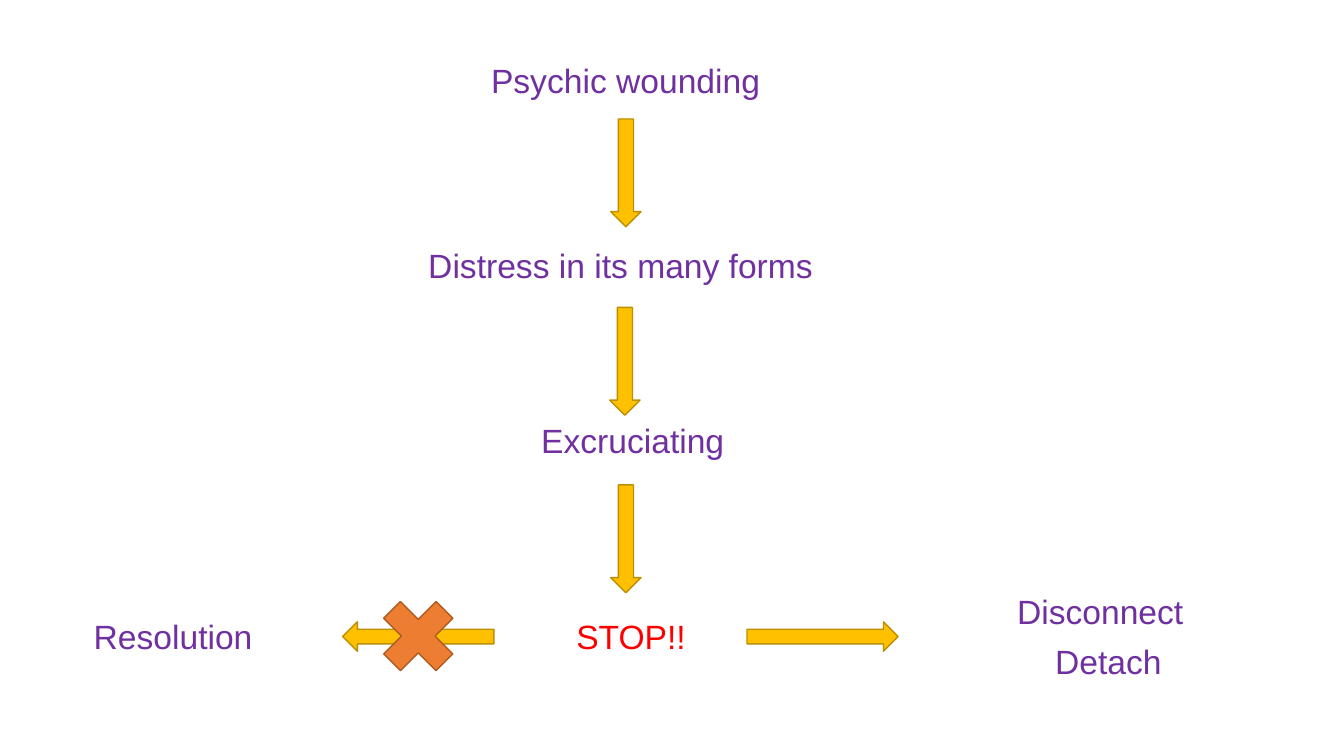
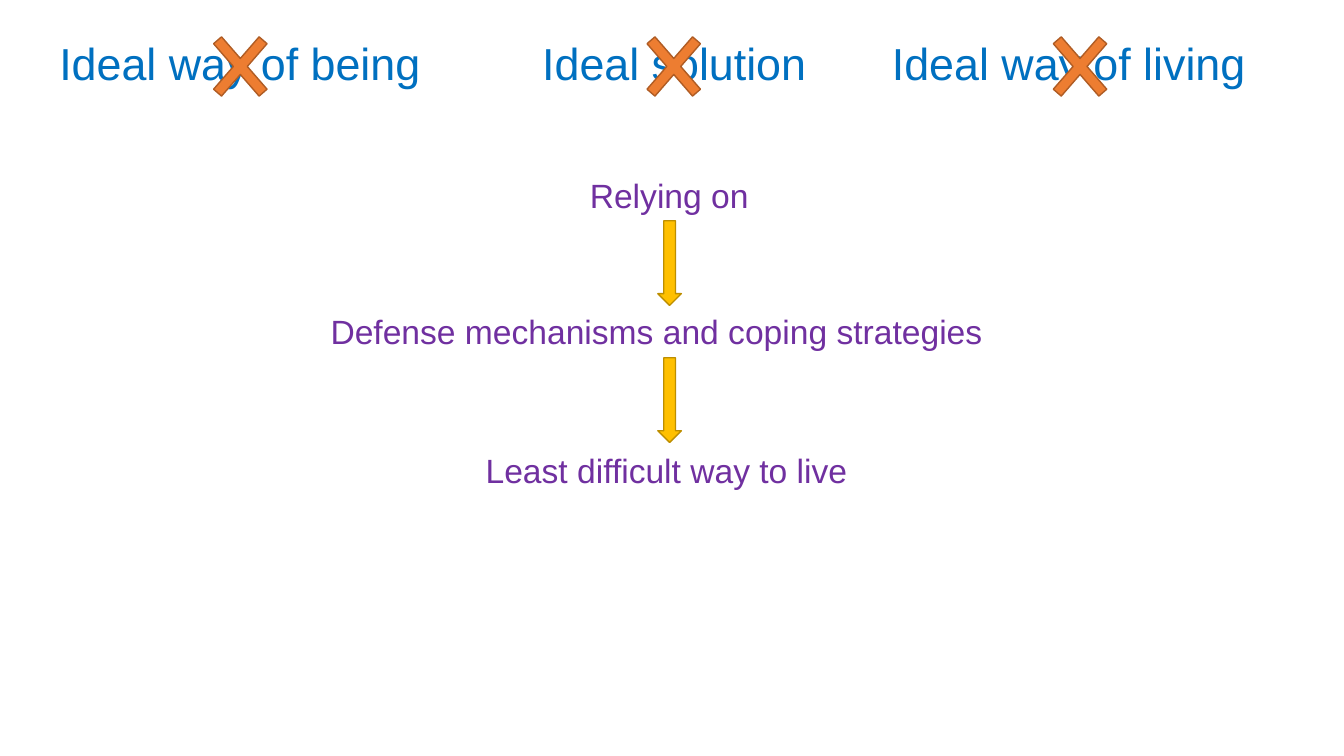
from pptx import Presentation
from pptx.dml.color import RGBColor
from pptx.enum.shapes import MSO_SHAPE
from pptx.enum.text import MSO_AUTO_SIZE, PP_ALIGN
from pptx.util import Pt

COLORS = {
    "step": "7030A0",
    "stop": "FF0000",
    "ideal": "0070C0",
    "arrow": "FFC000",
    "arrow_line": "BD8E00",
    "cross": "ED7D31",
    "cross_line": "AF5C24",
}
FONT = "Arial"
LEFT, CENTER = PP_ALIGN.LEFT, PP_ALIGN.CENTER


def add_label(s, text, x, y, w, align=LEFT, color="step", size=24):
    tb = s.shapes.add_textbox(Pt(x), Pt(y), Pt(w), Pt(size * 1.2 + 7.2))
    tf = tb.text_frame
    tf.word_wrap = True
    tf.auto_size = MSO_AUTO_SIZE.SHAPE_TO_FIT_TEXT
    p = tf.paragraphs[0]
    p.text = text
    p.alignment = align
    font = p.runs[0].font
    font.name = FONT
    font.size = Pt(size)
    font.color.rgb = RGBColor.from_string(COLORS[color])


def add_mark(s, kind, x, y, w, h, color="arrow"):
    """Add an arrow or cross, filled and outlined in its colour pair."""
    sp = s.shapes.add_shape(kind, Pt(x), Pt(y), Pt(w), Pt(h))
    sp.shadow.inherit = False
    sp.fill.solid()
    sp.fill.fore_color.rgb = RGBColor.from_string(COLORS[color])
    sp.line.color.rgb = RGBColor.from_string(COLORS[color + "_line"])
    sp.line.width = Pt(1)
    return sp


prs = Presentation()
prs.slide_width, prs.slide_height = Pt(960), Pt(540)
blank = prs.slide_layouts[6]

# Slide 1: from wounding to disconnection
s = prs.slides.add_slide(blank)
for text, x, y, w, align, color in [
    ("Psychic wounding", 275.8, 39.6, 342, CENTER, "step"),
    ("Distress in its many forms", 298.8, 171.6, 296.6, LEFT, "step"),
    ("Excruciating", 379.5, 296.6, 196.6, LEFT, "step"),
    ("STOP!!", 404.6, 436.4, 105, LEFT, "stop"),
    ("Resolution", 59.8, 436.4, 173.5, LEFT, "step"),
    ("Disconnect", 697, 418.4, 177.8, CENTER, "step"),
    ("Detach", 746.6, 454.4, 103, LEFT, "step"),
]:
    add_label(s, text, x, y, w, align, color)
for x, y in [(436.3, 85), (435.6, 219.6), (436.3, 346.4)]:
    add_mark(s, MSO_SHAPE.DOWN_ARROW, x, y, 21.6, 77)
for kind, x in [(MSO_SHAPE.LEFT_ARROW, 244.8), (MSO_SHAPE.RIGHT_ARROW, 533.6)]:
    add_mark(s, kind, x, 444.2, 108, 21)
add_mark(s, MSO_SHAPE.MATH_MULTIPLY, 262.8, 418.4, 72, 72, "cross")

# Slide 2: ideals crossed out, and what is left
s = prs.slides.add_slide(blank)
for text, x, w, cross_x in [
    ("Ideal way of being", 35.3, 290.9, 140.4),
    ("Ideal solution", 380.2, 236.2, 450),
    ("Ideal way of living", 630, 308.2, 740.2),
]:
    add_label(s, text, x, 21.6, w, color="ideal", size=32)
    cross = add_mark(s, MSO_SHAPE.MATH_MULTIPLY, cross_x, 11.5, 62.6, 72, "cross")
    cross.adjustments[0] = 0.12
for text, x, y, w, align in [
    ("Relying on", 396, 121.7, 164, CENTER),
    ("Defense mechanisms and coping strategies", 229, 218.2, 514.8, LEFT),
    ("Least difficult way to live", 339.8, 317.5, 277.2, LEFT),
]:
    add_label(s, text, x, y, w, align)
for y in (157.7, 255.6):
    add_mark(s, MSO_SHAPE.DOWN_ARROW, 469.9, y, 16.8, 60.5)

prs.save("out.pptx")
